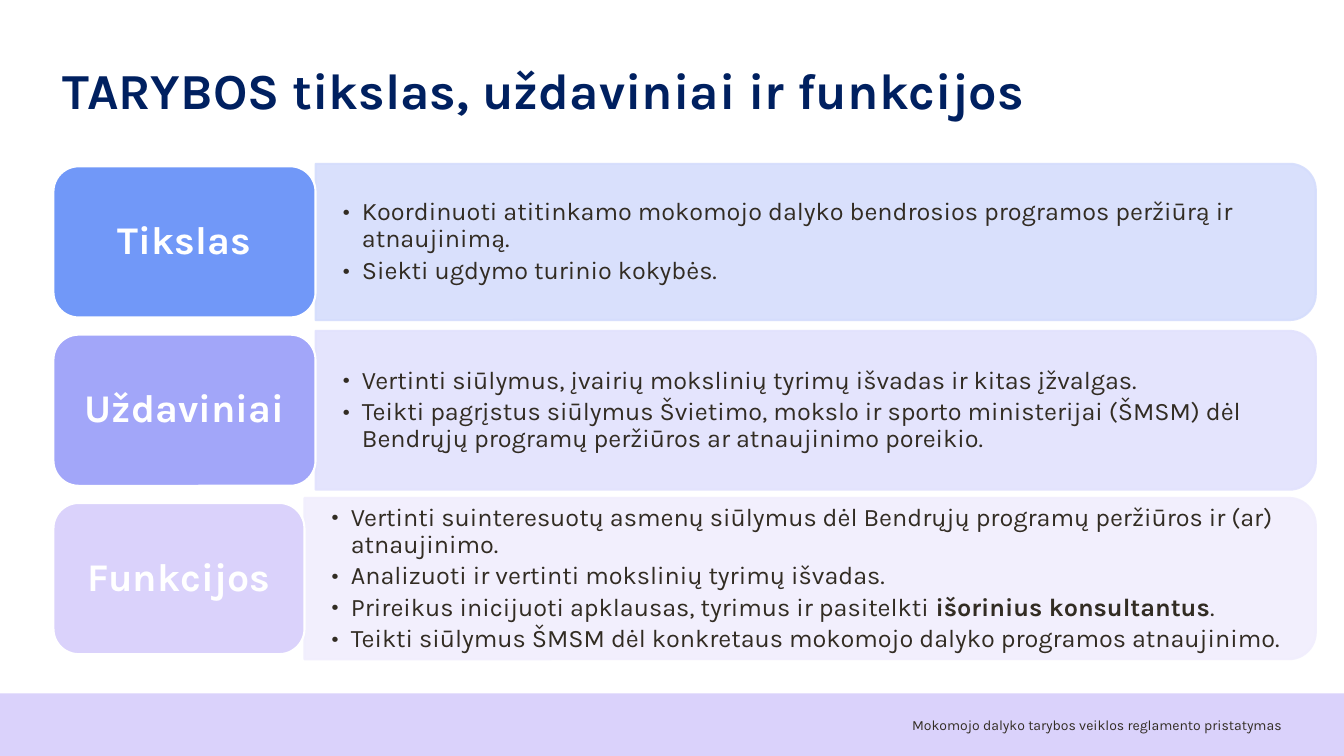
"""Build the slide on the goal, tasks and functions of the council."""
import dataclasses

import lxml.etree
import pptx
import pptx.dml.color
import pptx.enum.shapes
import pptx.enum.text
import pptx.oxml.ns
import pptx.util

SHAPE = pptx.enum.shapes.MSO_SHAPE
ALIGN = pptx.enum.text.PP_ALIGN
SLIDE_WIDTH = pptx.util.Inches(13.33)
SLIDE_HEIGHT = pptx.util.Inches(7.5)
GRID_ROWS = 90


@dataclasses.dataclass(frozen=True)
class Theme:
    """Fonts, colours and type sizes of the slide."""
    font: str = "Karla"
    title: str = "002060"
    ink: str = "322C23"
    white: str = "FFFFFF"
    band: str = "DAD2FB"
    title_size: int = 36
    label_size: int = 28
    body_size: int = 18
    footer_size: int = 10
    line_spacing: float = 0.9
    panel_opacity: int = 90


@dataclasses.dataclass(frozen=True)
class Box:
    """A rectangle measured in square grid cells."""
    left: float
    top: float
    width: float
    height: float

    def upright(self):
        """Return the box that covers this one after a quarter turn."""
        shift = (self.width - self.height) / 2
        return Box(self.left + shift, self.top - shift, self.height, self.width)

    def lengths(self):
        """Return left, top, width and height for a shape."""
        return [cells(n) for n in (self.left, self.top, self.width, self.height)]


@dataclasses.dataclass(frozen=True)
class Topic:
    """A label with its colours and bullets; each bullet lists (text, bold)."""
    label: str
    label_fill: str
    panel_fill: str
    label_width: float
    bullets: list


THEME = Theme()
TITLE = "TARYBOS tikslas, uždaviniai ir funkcijos"
FOOTER = "Mokomojo dalyko tarybos veiklos reglamento pristatymas"
TOPICS = [
    Topic("Tikslas", "7198F8", "D5DDFC", 31.2, [
        [("Koordinuoti atitinkamo mokomojo dalyko bendrosios programos "
          "peržiūrą ir atnaujinimą.", False)],
        [("Siekti ugdymo turinio kokybės.", False)],
    ]),
    Topic("Uždaviniai", "A2A6F9", "E2E2FD", 31.2, [
        [("Vertinti siūlymus, įvairių mokslinių tyrimų išvadas ir kitas "
          "įžvalgas.", False)],
        [("Teikti pagrįstus siūlymus Švietimo, mokslo ir sporto ministerijai "
          "(ŠMSM) dėl Bendrųjų programų peržiūros ar atnaujinimo poreikio.", False)],
    ]),
    Topic("Funkcijos", "DAD2FB", "F1EEFD", 29.88, [
        [("Vertinti suinteresuotų asmenų siūlymus dėl Bendrųjų programų "
          "peržiūros ir (ar) atnaujinimo.", False)],
        [("Analizuoti ir vertinti mokslinių tyrimų išvadas.", False)],
        [("Prireikus inicijuoti apklausas, tyrimus ir pasitelkti ", False),
         ("išorinius konsultantus", True), (".", False)],
        [("Teikti siūlymus ŠMSM dėl konkretaus mokomojo dalyko programos "
          "atnaujinimo.", False)],
    ]),
]


def cells(count):
    """Convert grid cells to a length."""
    return pptx.util.Emu(round(SLIDE_HEIGHT / GRID_ROWS * count))


def rgb(code):
    """Return a colour from its hex code."""
    return pptx.dml.color.RGBColor.from_string(code)


def add_block(shapes, kind, box, fill, line=None):
    """Add a flat preset shape with an optional outline."""
    block = shapes.add_shape(kind, *box.lengths())
    block.shadow.inherit = False
    block.fill.solid()
    block.fill.fore_color.rgb = rgb(fill)
    if line:
        block.line.color.rgb = rgb(line)
        block.line.width = pptx.util.Pt(1.5)
    else:
        block.line.fill.background()
    return block


def prepare_frame(shape, across=0, down=0):
    """Wrap and centre a text frame vertically, and return it."""
    frame = shape.text_frame
    frame.word_wrap = True
    frame.auto_size = pptx.enum.text.MSO_AUTO_SIZE.NONE
    frame.vertical_anchor = pptx.enum.text.MSO_ANCHOR.MIDDLE
    frame.margin_left = frame.margin_right = cells(across)
    frame.margin_top = frame.margin_bottom = cells(down)
    return frame


def add_span(para, text, size, color, bold=False):
    """Add one formatted run."""
    span = para.add_run()
    span.text = text
    span.font.name = THEME.font
    span.font.size = pptx.util.Pt(size)
    span.font.bold = bold
    span.font.color.rgb = rgb(color)


def add_bullet(para):
    """Give a paragraph a round bullet with a hanging indent."""
    properties = para._p.get_or_add_pPr()
    properties.set("marL", str(cells(2.28)))
    properties.set("indent", str(-cells(2.28)))
    for tag, name, value in (("a:buFont", "typeface", THEME.font),
                             ("a:buChar", "char", "•")):
        mark = lxml.etree.SubElement(properties, pptx.oxml.ns.qn(tag))
        mark.set(name, value)


def set_opacity(shape, percent):
    """Make the fill and outline of a shape partly transparent."""
    for color in shape._element.spPr.iter(pptx.oxml.ns.qn("a:srgbClr")):
        alpha = lxml.etree.SubElement(color, pptx.oxml.ns.qn("a:alpha"))
        alpha.set("val", str(percent * 1000))


def add_title(page, box):
    """Place and fill the title placeholder."""
    title = page.shapes.title
    title.left, title.top, title.width, title.height = box.lengths()
    para = prepare_frame(title).paragraphs[0]
    para.alignment = ALIGN.LEFT
    para.line_spacing = THEME.line_spacing
    add_span(para, TITLE, THEME.title_size, THEME.title, True)


def add_footer(page, box):
    """Draw the footer band with its right-aligned text."""
    add_block(page.shapes, SHAPE.RECTANGLE, box, THEME.band)
    note = Box(box.left + 98.52, box.top + 1.68, 54, 4.2)
    para = prepare_frame(page.shapes.add_textbox(*note.lengths())).paragraphs[0]
    para.alignment = ALIGN.RIGHT
    add_span(para, FOOTER, THEME.footer_size, THEME.ink)


def add_panel(shapes, box, topic):
    """Draw a panel rounded on its right side, with bullets."""
    panel = add_block(shapes, SHAPE.ROUND_2_SAME_RECTANGLE, box.upright(),
                      topic.panel_fill, topic.panel_fill)
    panel.rotation = 90
    set_opacity(panel, THEME.panel_opacity)
    text_box = Box(box.left, box.top + 0.9, box.width - 0.4, box.height - 1.8)
    frame = prepare_frame(shapes.add_textbox(*text_box.lengths()), 3.24, 1)
    for index, bullet in enumerate(topic.bullets):
        para = frame.add_paragraph() if index else frame.paragraphs[0]
        para.level = 1
        para.line_spacing = THEME.line_spacing
        para.space_after = pptx.util.Pt(3)
        add_bullet(para)
        for text, bold in bullet:
            add_span(para, text, THEME.body_size, THEME.ink, bold)


def add_label(shapes, box, topic):
    """Draw a rounded label."""
    label = add_block(shapes, SHAPE.ROUNDED_RECTANGLE, box, topic.label_fill, THEME.white)
    para = prepare_frame(label, 1.44, 0.72).paragraphs[0]
    para.alignment = ALIGN.CENTER
    para.line_spacing = THEME.line_spacing
    add_span(para, topic.label, THEME.label_size, THEME.white, True)


def add_topics(page, box):
    """Stack the topics in the box, each a label beside a panel."""
    shapes = page.shapes.add_group_shape().shapes
    for index, topic in enumerate(TOPICS):
        middle = box.top + 9.3 + 20.04 * index
        height = 18.6 + 0.3 * index
        panel = Box(box.left + topic.label_width, middle - height / 2,
                    box.width - topic.label_width, height)
        add_panel(shapes, panel, topic)
        add_label(shapes, Box(box.left, middle - 9, topic.label_width, 18), topic)


def main():
    """Build and save the deck."""
    deck = pptx.Presentation()
    deck.slide_width, deck.slide_height = SLIDE_WIDTH, SLIDE_HEIGHT
    page = deck.slides.add_slide(deck.slide_layouts[5])
    add_footer(page, Box(0, 82.56, 159.96, 7.44))
    add_title(page, Box(7.44, 5.52, 144.96, 11.04))
    add_topics(page, Box(6.36, 19.5, 150.24, 59))
    deck.save("out.pptx")


if __name__ == "__main__":
    main()
